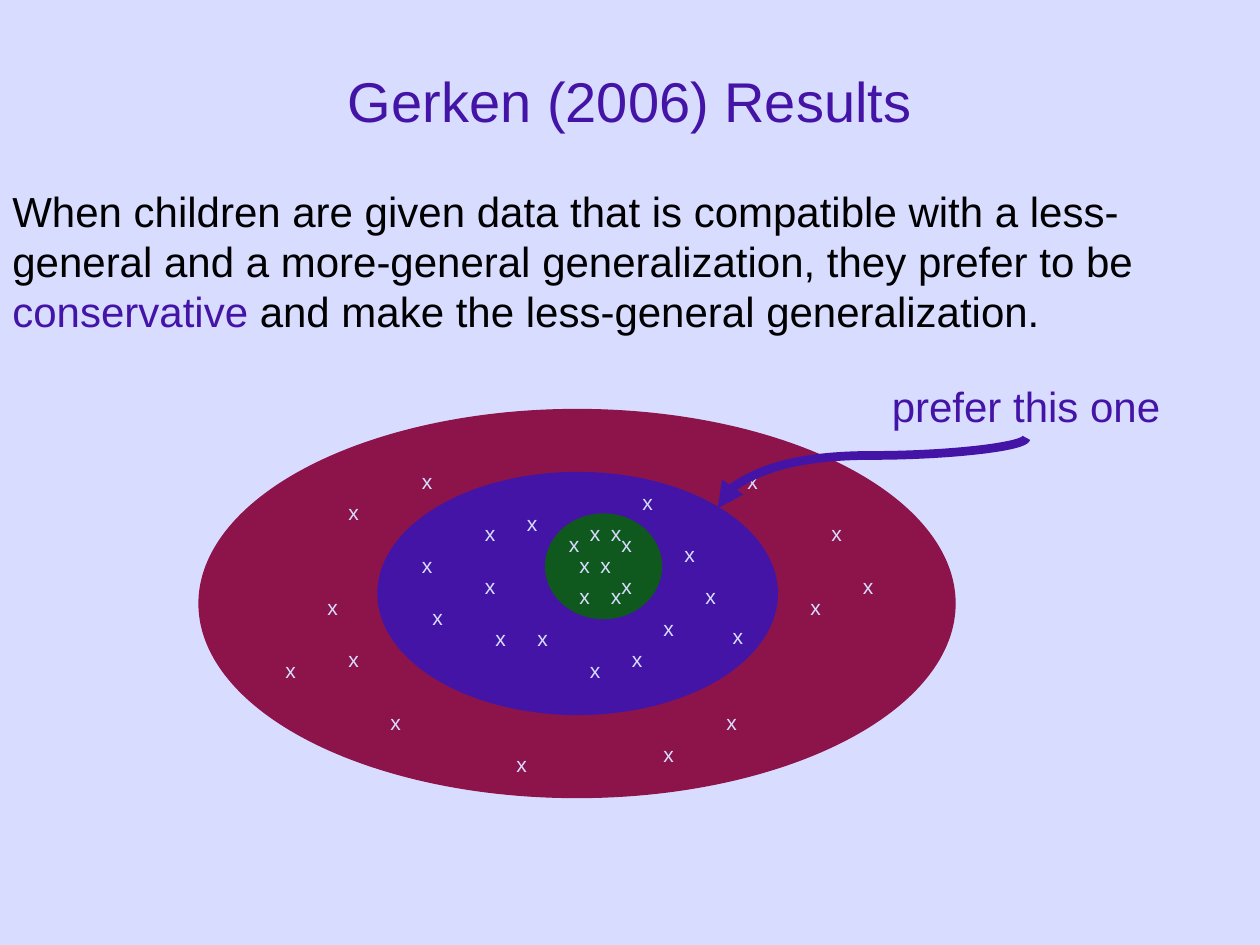
from lxml.etree import SubElement
from pptx import Presentation
from pptx.dml.color import RGBColor
from pptx.enum.shapes import MSO_CONNECTOR, MSO_SHAPE
from pptx.enum.text import MSO_ANCHOR, MSO_AUTO_SIZE, PP_ALIGN
from pptx.oxml.ns import qn
from pptx.util import Inches, Pt

LAVENDER = RGBColor(0xD8, 0xDC, 0xFF)
VIOLET = RGBColor(0x44, 0x14, 0xA7)
MAROON = RGBColor(0x8C, 0x14, 0x4A)
GREEN = RGBColor(0x0F, 0x59, 0x1E)
BLACK = RGBColor(0, 0, 0)

# Data points lie on a grid of twelfths of an inch: (column, row)
GRID = 12
INNER_POINTS = [(55, 49), (58, 50), (54, 55), (57, 55), (54, 52), (56, 52),
                (58, 54), (53, 50), (57, 49)]
MIDDLE_POINTS = [(39, 52), (46, 59), (55, 62), (62, 58), (49, 48), (64, 51),
                 (45, 54), (59, 61), (60, 46), (66, 55), (50, 59), (45, 49),
                 (40, 57), (68.6, 58.8)]
OUTER_POINTS = [(78, 49), (76, 56), (81, 54), (62, 70), (68, 67), (48, 71),
                (36, 67), (30, 56), (26, 62), (32, 47), (32, 61), (70, 44),
                (39, 44)]


class SlideBuilder:
    font = "Arial"

    def __init__(self, slide, background):
        self.slide = slide
        slide.background.fill.solid()
        slide.background.fill.fore_color.rgb = background

    def text(self, left, top, width, height, parts, size, wrap=True,
             align=PP_ALIGN.LEFT, anchor=MSO_ANCHOR.TOP, grow=True):
        box = self.slide.shapes.add_textbox(
            Inches(left), Inches(top), Inches(width), Inches(height))
        frame = box.text_frame
        frame.word_wrap = wrap
        frame.vertical_anchor = anchor
        if grow:
            frame.auto_size = MSO_AUTO_SIZE.SHAPE_TO_FIT_TEXT
        paragraph = frame.paragraphs[0]
        paragraph.alignment = align
        for wording, color in parts:
            run = paragraph.add_run()
            run.text = wording
            run.font.name = self.font
            run.font.size = Pt(size)
            run.font.color.rgb = color

    def ellipse(self, left, top, width, height, color):
        oval = self.slide.shapes.add_shape(
            MSO_SHAPE.OVAL, Inches(left), Inches(top), Inches(width), Inches(height))
        oval.shadow.inherit = False
        oval.fill.solid()
        oval.fill.fore_color.rgb = color
        oval.line.color.rgb = color
        oval.line.width = Pt(0.75)

    def data_point(self, column, row):
        self.text(column / GRID, row / GRID, 0.28, 0.3, [("x", LAVENDER)], 12, wrap=False)

    def curved_arrow(self, left, top, width, height, bend, color, weight):
        """Arrow whose unrotated frame is given; it is turned by 90 degrees."""
        arrow = self.slide.shapes.add_connector(
            MSO_CONNECTOR.CURVE, Inches(left), Inches(top),
            Inches(left + width), Inches(top + height))
        arrow.line.color.rgb = color
        arrow.line.width = Pt(weight)
        properties = arrow._element.spPr
        properties.find(qn("a:xfrm")).set("rot", str(90 * 60000))
        adjustments = properties.find(qn("a:prstGeom")).get_or_add_avLst()
        SubElement(adjustments, qn("a:gd"), name="adj1", fmla=f"val {int(bend * 100000)}")
        SubElement(properties.find(qn("a:ln")), qn("a:tailEnd"), type="triangle")
        SubElement(properties, qn("a:effectLst"))


def main():
    deck = Presentation()
    deck.slide_width, deck.slide_height = Inches(10), Inches(7.5)
    builder = SlideBuilder(deck.slides.add_slide(deck.slide_layouts[6]), LAVENDER)

    # Title and finding
    builder.text(0, 0.17, 10, 1.25, [("Gerken (2006) Results", VIOLET)], 32,
                 align=PP_ALIGN.CENTER, anchor=MSO_ANCHOR.MIDDLE, grow=False)
    builder.text(0, 1.42, 9.83, 1.3, [
        ("When children are given data that is compatible with a less-general "
         "and a more-general generalization, they prefer to be ", BLACK),
        ("conservative", VIOLET),
        (" and make the less-general generalization.", BLACK)], 24)

    # Nested generalizations
    builder.ellipse(1.58, 3.25, 6, 3.08, MAROON)
    builder.ellipse(3, 3.75, 3.17, 1.92, VIOLET)
    builder.ellipse(4.33, 4.08, 0.92, 0.83, GREEN)

    # Data points
    for column, row in INNER_POINTS + MIDDLE_POINTS + OUTER_POINTS:
        builder.data_point(column, row)

    # Preferred generalization
    builder.text(6.98, 2.97, 2.33, 0.5, [("prefer this one", VIOLET)], 24, wrap=False)
    builder.curved_arrow(6.64, 2.53, 0.56, 2.45, 0.25, VIOLET, 5)

    deck.save("out.pptx")


if __name__ == "__main__":
    main()
